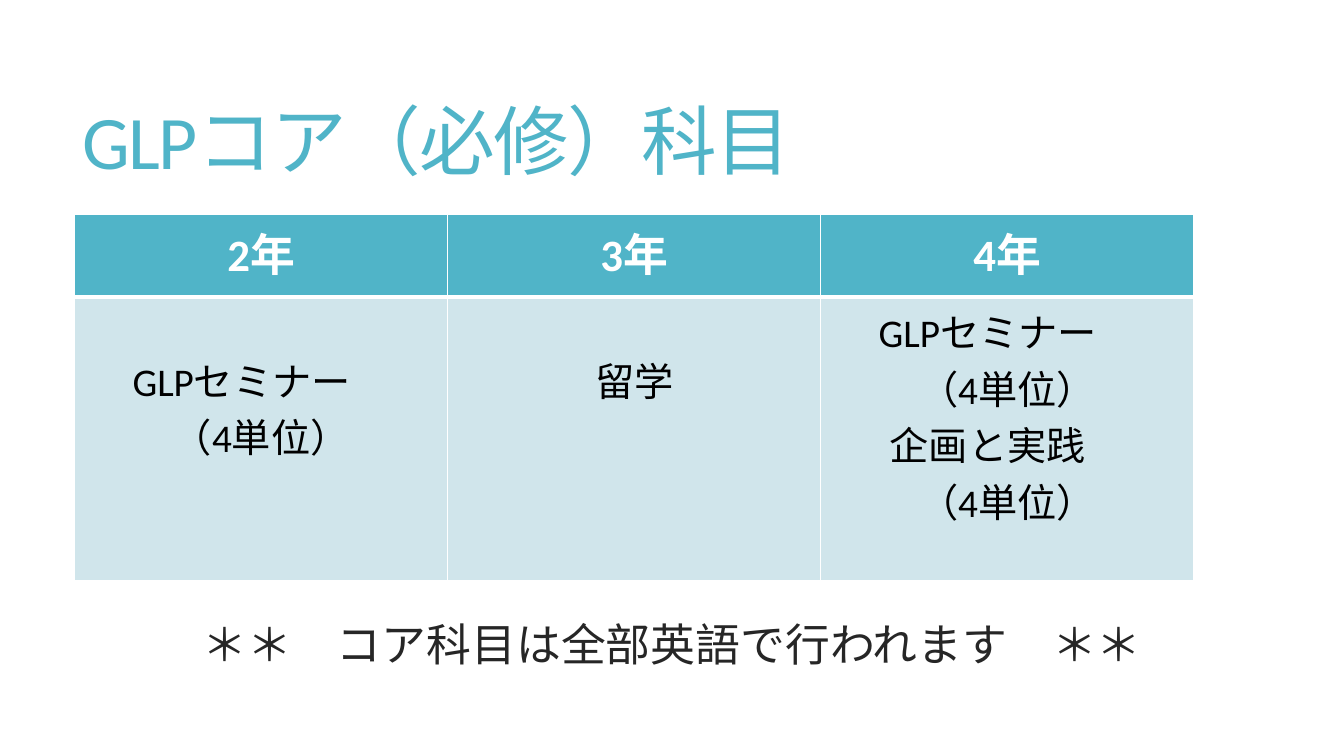
from dataclasses import dataclass

import pptx
import pptx.dml.color
import pptx.enum.text
import pptx.oxml
import pptx.oxml.ns
import pptx.util
from pptx.util import Inches


@dataclass(frozen=True)
class Theme:
    font: str = "Calibri"
    accent: str = "50B4C8"
    pale: str = "D0E5EB"
    white: str = "FFFFFF"
    black: str = "000000"
    ink: str = "262626"
    title_size: int = 54
    heading_size: int = 32
    course_size: int = 28


THEME = Theme()
CENTER = pptx.enum.text.PP_ALIGN.CENTER
MIDDLE = pptx.enum.text.MSO_ANCHOR.MIDDLE

YEARS = ["2年", "3年", "4年"]
COURSES = [
    ["GLPセミナー\u3000".replace("\u3000", "　"), "（4単位）"],
    ["留学"],
    ["GLPセミナー　", "（4単位）", "企画と実践　", "（4単位）"],
]
COURSES[0][0] = COURSES[2][0]


def write_lines(frame, lines, size, color, bold=False, align=None):
    frame.text = "\n".join(lines)
    for paragraph in frame.paragraphs:
        paragraph.alignment = align
        paragraph.font.name = THEME.font
        paragraph.font.size = pptx.util.Pt(size)
        paragraph.font.bold = bold
        paragraph.font.color.rgb = pptx.dml.color.RGBColor.from_string(color)


def add_text(slide, box, text, size, color, align=None):
    frame = slide.shapes.add_textbox(*map(Inches, box)).text_frame
    frame.word_wrap = True
    frame.vertical_anchor = MIDDLE
    write_lines(frame, [text], size, color, align=align)
    frame.paragraphs[0].line_spacing = 0.85
    return frame.paragraphs[0]


def set_borders(cell, bottom):
    properties = cell._tc.get_or_add_tcPr()
    widths = {"lnL": 1, "lnR": 1, "lnT": 1, "lnB": bottom}
    for index, (side, width) in enumerate(widths.items()):
        border = pptx.oxml.parse_xml(
            f'<a:{side} {pptx.oxml.ns.nsdecls("a")} w="{pptx.util.Pt(width)}">'
            f'<a:solidFill><a:srgbClr val="{THEME.white}"/></a:solidFill></a:{side}>'
        )
        properties.insert(index, border)


def fill_cell(cell, lines, fill, size, color, bold=False, bottom=1):
    cell.fill.solid()
    cell.fill.fore_color.rgb = pptx.dml.color.RGBColor.from_string(fill)
    set_borders(cell, bottom)
    write_lines(cell.text_frame, lines, size, color, bold, CENTER)


def add_course_table(slide):
    table = slide.shapes.add_table(
        2, len(YEARS), Inches(0.74), Inches(2.13), Inches(11.1), Inches(3.63)
    ).table
    for row, height in zip(table.rows, (0.82, 2.81)):
        row.height = Inches(height)
    for column, (year, courses) in enumerate(zip(YEARS, COURSES)):
        table.columns[column].width = Inches(3.7)
        fill_cell(table.cell(0, column), [year], THEME.accent,
                  THEME.heading_size, THEME.white, bold=True, bottom=3)
        course_cell = table.cell(1, column)
        fill_cell(course_cell, courses, THEME.pale, THEME.course_size, THEME.black)
        if len(courses) < 4:
            course_cell.margin_top = Inches(0.53)


def main():
    deck = pptx.Presentation()
    deck.slide_width, deck.slide_height = Inches(13.33), Inches(7.5)
    slide = deck.slides.add_slide(deck.slide_layouts[6])
    title = add_text(slide, (0.72, 0.55, 11.78, 1.81), "GLPコア（必修）科目",
                     THEME.title_size, THEME.accent)
    title.runs[0].font._element.set("spc", "-120")
    add_course_table(slide)
    add_text(slide, (0.79, 6, 11.76, 0.85), "＊＊　コア科目は全部英語で行われます　＊＊",
             THEME.heading_size, THEME.ink, CENTER)
    deck.save("out.pptx")


if __name__ == "__main__":
    main()
